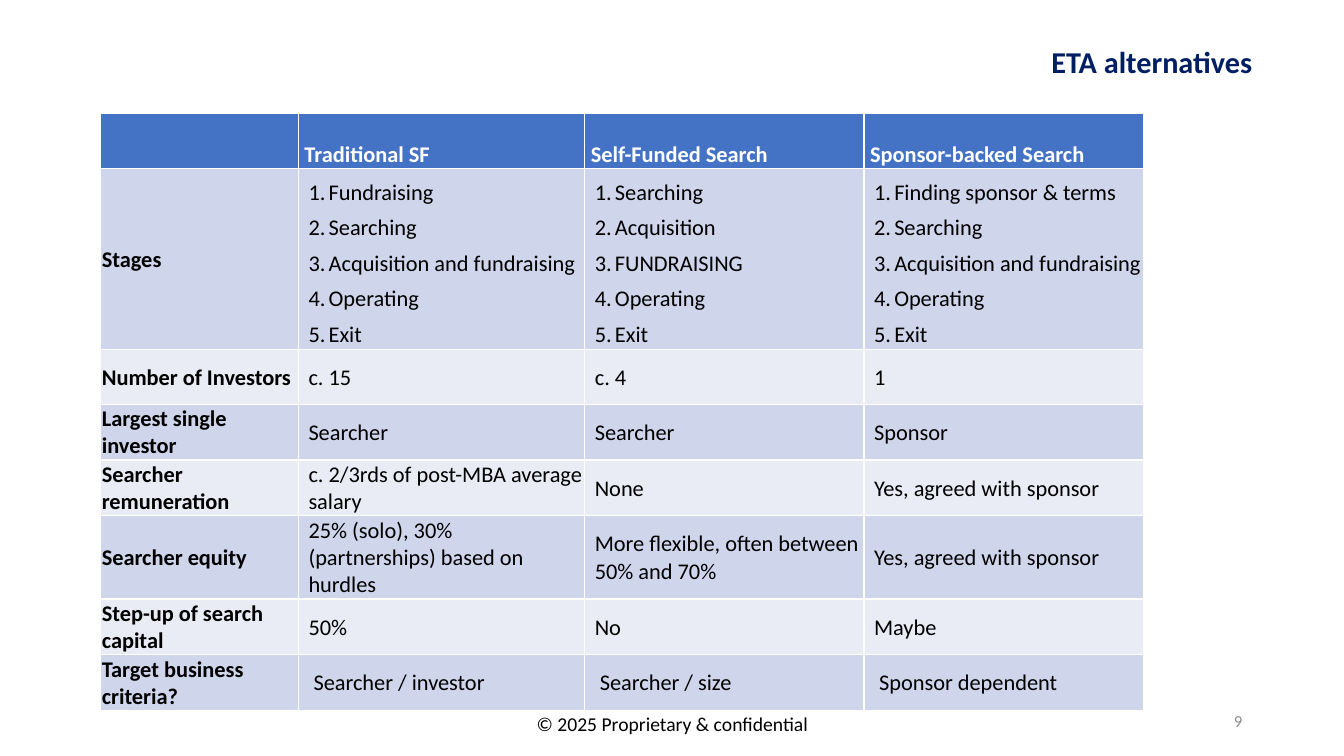
from dataclasses import dataclass

from lxml.etree import SubElement
from pptx import Presentation
from pptx.dml.color import RGBColor as Rgb
from pptx.enum.text import MSO_ANCHOR as Anchor, MSO_AUTO_SIZE as AutoSize, PP_ALIGN as Align
from pptx.oxml.ns import qn
from pptx.util import Pt

PX = 9144  # 100 px to the inch


@dataclass(frozen=True)
class Theme:
    font: str = "Calibri"
    navy: str = "001E62"
    black: str = "000000"
    white: str = "FFFFFF"
    grey: str = "8C8C8C"
    header: str = "4472C4"
    bands: tuple = ("CFD5EA", "E9EBF5")
    title_size: float = 21.6
    table_size: int = 16
    footer_size: int = 14
    number_size: int = 12


theme = Theme()


def add_span(para, text, size, color, bold=False):
    span = para.add_run()
    span.text = text
    span.font.name = theme.font
    span.font.size = Pt(size)
    span.font.bold = bold
    span.font.color.rgb = Rgb.from_string(color)


def set_indent(para, left, first=0, numbered=False):
    props = para._p.get_or_add_pPr()
    props.set("marL", str(left * PX))
    props.set("indent", str(first * PX))
    if numbered:
        SubElement(props, qn("a:buAutoNum"), type="arabicPeriod")


deck = Presentation()
deck.slide_width, deck.slide_height = 1333 * PX, 750 * PX
page = deck.slides.add_slide(deck.slide_layouts[5])

# Title
title = page.shapes.title
title.left, title.top, title.width, title.height = (n * PX for n in (348, 42, 894, 43))
frame = title.text_frame
frame.auto_size = AutoSize.NONE
frame.vertical_anchor = Anchor.MIDDLE
frame.margin_right = 0
para = frame.paragraphs[0]
para.alignment = Align.RIGHT
para.line_spacing = 0.9
add_span(para, "ETA alternatives", theme.title_size, theme.navy, bold=True)

# Comparison table: a list in a cell becomes numbered steps
rows = [
    ["", "Traditional SF", "Self-Funded Search", "Sponsor-backed Search"],
    ["Stages",
     ["Fundraising", "Searching", "Acquisition and fundraising", "Operating", "Exit"],
     ["Searching", "Acquisition", "FUNDRAISING", "Operating", "Exit"],
     ["Finding sponsor & terms", "Searching", "Acquisition and fundraising", "Operating", "Exit"]],
    ["Number of Investors", "c. 15", "c. 4", "1"],
    ["Largest single investor", "Searcher", "Searcher", "Sponsor"],
    ["Searcher remuneration", "c. 2/3rds of post-MBA average salary", "None",
     "Yes, agreed with sponsor"],
    ["Searcher equity", "25% (solo), 30% (partnerships) based on hurdles",
     "More flexible, often between 50% and 70%", "Yes, agreed with sponsor"],
    ["Step-up of search capital", "50%", "No", "Maybe"],
    ["Target business criteria?", "Searcher / investor", "Searcher / size", "Sponsor dependent"],
]
column_widths = [196, 284, 277, 277]
row_height, stages_height = 54, 180
last_row = len(rows) - 1

table = page.shapes.add_table(len(rows), len(column_widths), 100 * PX, 113 * PX,
                              1033 * PX, 558 * PX).table
for column, width in zip(table.columns, column_widths):
    column.width = width * PX

for r, row in enumerate(rows):
    table.rows[r].height = (stages_height if r == 1 else row_height) * PX
    is_header = r == 0
    for c, content in enumerate(row):
        cell = table.cell(r, c)
        cell.fill.solid()
        fill = theme.header if is_header else theme.bands[(r - 1) % 2]
        cell.fill.fore_color.rgb = Rgb.from_string(fill)
        if not content:
            continue
        cell.margin_left = cell.margin_top = cell.margin_right = PX
        cell.margin_bottom = 0
        cell.vertical_anchor = Anchor.BOTTOM if is_header else Anchor.MIDDLE
        numbered = isinstance(content, list)
        for i, text in enumerate(content if numbered else [content]):
            para = cell.text_frame.paragraphs[0] if i == 0 else cell.text_frame.add_paragraph()
            if numbered:
                para.line_spacing = 1.3
                set_indent(para, 29, -20, numbered=True)
            elif c > 0:
                set_indent(para, 5 if is_header else 14 if r == last_row else 9)
            add_span(para, text, theme.table_size,
                     theme.white if is_header else theme.black, bold=is_header or c == 0)

# Footer and page number
footers = [
    ("© 2025 Proprietary & confidential", (442, 701, 450, 40), Align.CENTER, Anchor.TOP,
     theme.footer_size, theme.black),
    ("9", (942, 695, 300, 40), Align.RIGHT, Anchor.MIDDLE, theme.number_size, theme.grey),
]
for text, place, align, anchor, size, color in footers:
    box = page.shapes.add_textbox(*(n * PX for n in place))
    box.text_frame.word_wrap = True
    box.text_frame.vertical_anchor = anchor
    para = box.text_frame.paragraphs[0]
    para.alignment = align
    add_span(para, text, size, color)

deck.save("out.pptx")
